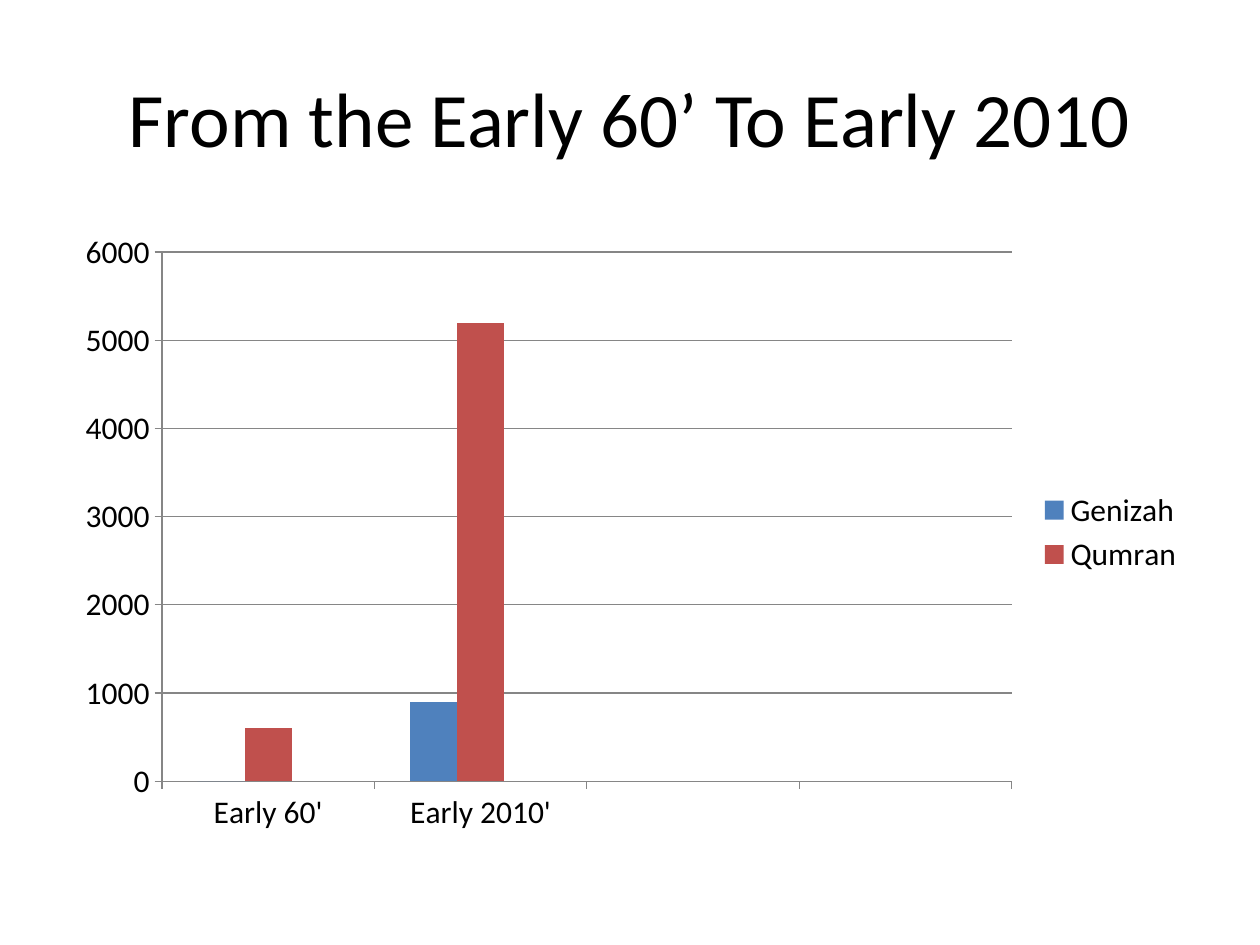
"""Build a slide with a column chart of Genizah and Qumran counts in two periods."""
from lxml.etree import SubElement
from pptx import Presentation
from pptx.chart.data import CategoryChartData as Data
from pptx.dml.color import RGBColor
from pptx.enum.chart import XL_CHART_TYPE as Kind, XL_LEGEND_POSITION as Side, XL_TICK_MARK as Tick
from pptx.enum.text import MSO_ANCHOR as Anchor, PP_ALIGN as Align
from pptx.oxml.ns import qn
from pptx.util import Inches, Pt

BLACK = RGBColor(0, 0, 0)
GRAY = RGBColor(0x86, 0x86, 0x86)
BLUE = RGBColor(0x4F, 0x81, 0xBD)
RED = RGBColor(0xC0, 0x50, 0x4D)
GREEN = RGBColor(0x9B, 0xBB, 0x59)


def style(font, size, color=BLACK, name="Calibri"):
    font.size, font.name = Pt(size), name
    font.color.rgb = color


def write(frame, text, size, align=Align.CENTER, anchor=Anchor.MIDDLE):
    frame.text = text
    frame.word_wrap = True
    frame.vertical_anchor = anchor
    para = frame.paragraphs[0]
    para.alignment = align
    style(para.runs[0].font, size)


deck = Presentation()
deck.slide_width, deck.slide_height = Inches(10), Inches(7.5)
wide, high = deck.slide_width, deck.slide_height
left, span = int(wide * 0.05), int(wide * 0.9)
slide = deck.slides.add_slide(deck.slide_layouts[5])

title = slide.shapes.title
title.left, title.top = left, int(high * 0.04)
title.width, title.height = span, Inches(1.25)
write(title.text_frame, "From the Early 60’ To Early 2010", 44)

series = [
    ("Genizah", (0, 900, None, None), BLUE),
    ("Qumran", (600, 5200, None, None), RED),
    ("Series 3", (None,) * 4, GREEN),
]
data = Data()
data.categories = ["Early 60'", "Early 2010'", "", ""]
for name, counts, color in series:
    data.add_series(name, counts)

chart = slide.shapes.add_chart(
    Kind.COLUMN_CLUSTERED, left, Inches(1.75), span, int(high * 0.66), data
).chart
chart.has_title = False
style(chart.font, 18)

plot = chart.plots[0]
plot.gap_width, plot.overlap, plot.vary_by_categories = 150, 0, False
for bars, (name, counts, color) in zip(plot.series, series):
    bars.format.fill.solid()
    bars.format.fill.fore_color.rgb = color

rise = chart.value_axis
rise.minimum_scale, rise.maximum_scale, rise.major_unit = 0, 6000, 1000
rise.has_major_gridlines = True
for axis in (chart.category_axis, rise):
    axis.major_tick_mark, axis.minor_tick_mark = Tick.OUTSIDE, Tick.NONE
for part in (chart.category_axis, rise, rise.major_gridlines):
    part.format.line.color.rgb = GRAY
    part.format.line.width = Pt(0.75)

chart.has_legend = True
legend = chart.legend
legend.position, legend.include_in_layout = Side.RIGHT, False
style(legend.font, 18)
entry = SubElement(legend._element, qn("c:legendEntry"))
SubElement(entry, qn("c:idx")).set("val", "2")
SubElement(entry, qn("c:delete")).set("val", "1")
legend._element.find(qn("c:legendPos")).addnext(entry)

deck.save("out.pptx")
